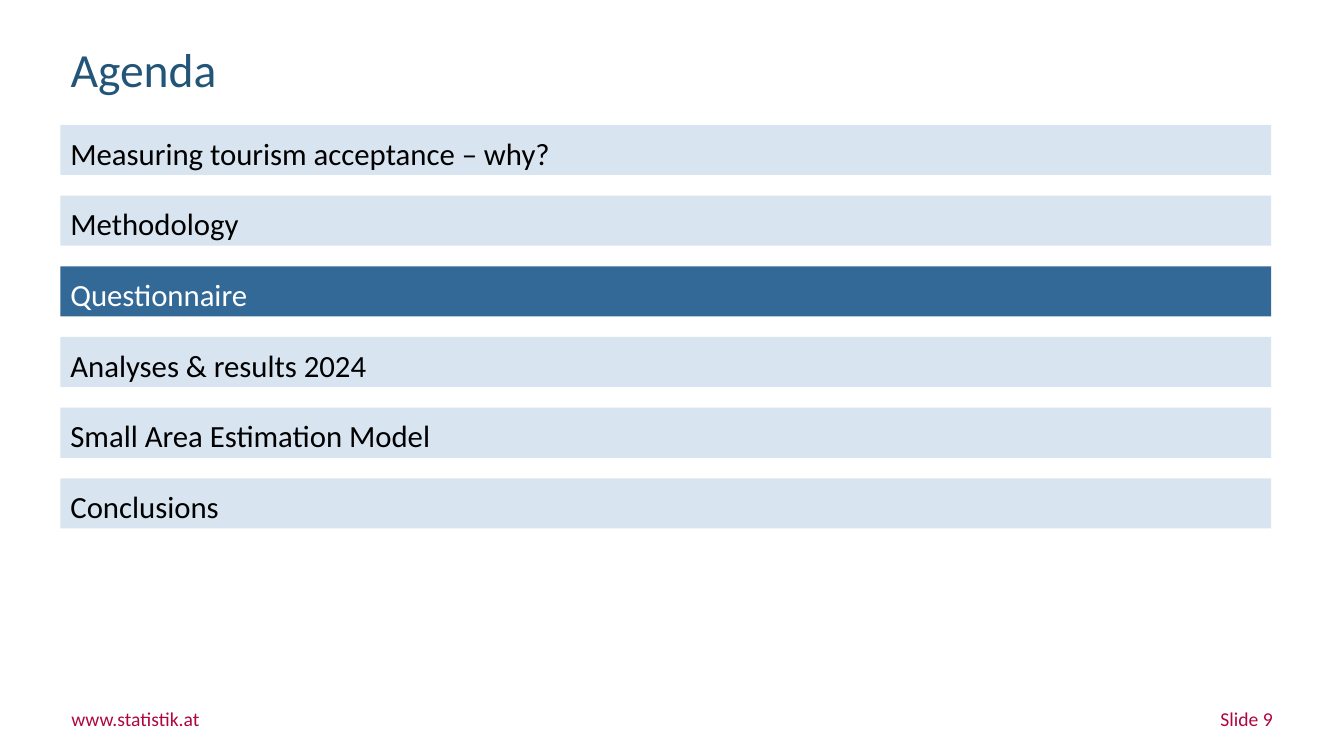
from pptx import Presentation
from pptx.dml.color import RGBColor
from pptx.enum.shapes import MSO_SHAPE
from pptx.enum.text import MSO_ANCHOR, PP_ALIGN
from pptx.util import Pt

RECTANGLE = MSO_SHAPE.RECTANGLE
TOP, MIDDLE = MSO_ANCHOR.TOP, MSO_ANCHOR.MIDDLE
LEFT, RIGHT = PP_ALIGN.LEFT, PP_ALIGN.RIGHT

FONT = "Calibri"
COLORS = {
    "title": "235578",
    "bar": "D8E5F1",
    "active_bar": "326996",
    "text": "000000",
    "active_text": "FFFFFF",
    "footer": "B0063D",
}

AGENDA = [
    "Measuring tourism acceptance – why?",
    "Methodology",
    "Questionnaire",
    "Analyses & results 2024",
    "Small Area Estimation Model",
    "Conclusions",
]
ACTIVE_ITEM = "Questionnaire"

CONTENT_LEFT, CONTENT_WIDTH = 43.2, 864.7
BAR_TOP, BAR_HEIGHT, BAR_PITCH = 89.2, 35.8, 50.5


def color(name):
    return RGBColor.from_string(COLORS[name])


def write_text(shape, text, size, color_name, align=LEFT, anchor=TOP,
               spacing=1.0, inset=(7.2, 3.6)):
    frame = shape.text_frame
    frame.word_wrap = True
    frame.vertical_anchor = anchor
    frame.margin_left = frame.margin_right = Pt(inset[0])
    frame.margin_top = frame.margin_bottom = Pt(inset[1])
    paragraph = frame.paragraphs[0]
    paragraph.alignment = align
    paragraph.line_spacing = spacing
    run = paragraph.add_run()
    run.text = text
    run.font.name = FONT
    run.font.size = Pt(size)
    run.font.color.rgb = color(color_name)


def add_title(slide, text):
    title = slide.shapes.title
    title.left, title.top = Pt(CONTENT_LEFT), Pt(29.5)
    title.width, title.height = Pt(CONTENT_WIDTH), Pt(44.6)
    write_text(title, text, 34, "title", anchor=MIDDLE, spacing=0.9)


def add_agenda_bar(slide, text, top, active):
    bar = slide.shapes.add_shape(RECTANGLE, Pt(CONTENT_LEFT), Pt(top),
                                 Pt(CONTENT_WIDTH), Pt(BAR_HEIGHT))
    bar.shadow.inherit = False
    bar.fill.solid()
    bar.fill.fore_color.rgb = color("active_bar" if active else "bar")
    bar.line.fill.background()
    write_text(bar, text, 22, "active_text" if active else "text", spacing=1.12)


def add_footer(slide, text, left, top, width, align):
    box = slide.shapes.add_textbox(Pt(left), Pt(top), Pt(width), Pt(17))
    write_text(box, text, 14, "footer", align=align, inset=(0, 0))


def main():
    presentation = Presentation()
    presentation.slide_width, presentation.slide_height = Pt(960), Pt(540)
    title_only = presentation.slide_layouts[5]
    slide = presentation.slides.add_slide(title_only)

    # Title and agenda
    add_title(slide, "Agenda")
    for index, item in enumerate(AGENDA):
        add_agenda_bar(slide, item, BAR_TOP + index * BAR_PITCH, item == ACTIVE_ITEM)

    # Footer
    add_footer(slide, "www.statistik.at", 51, 505, 120, LEFT)
    add_footer(slide, "Slide 9", 693.2, 505.2, 216, RIGHT)

    presentation.save("out.pptx")


if __name__ == "__main__":
    main()
